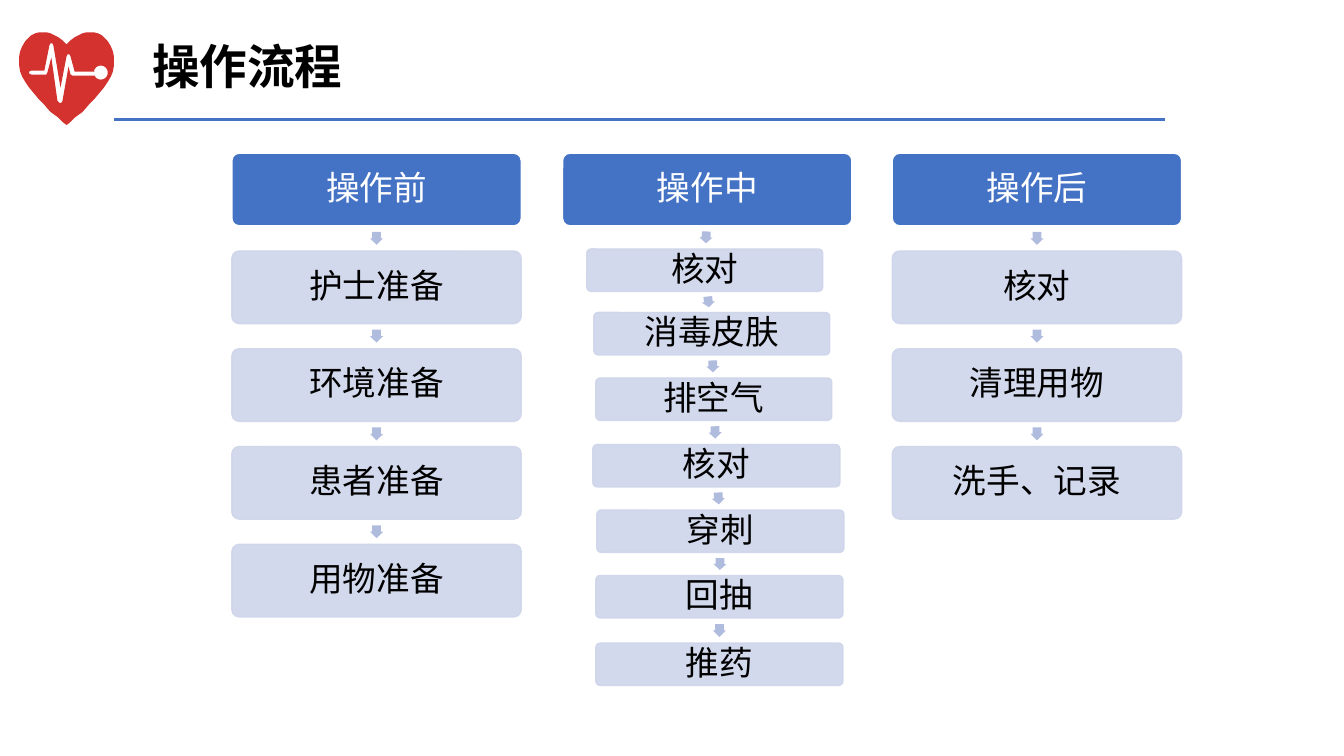
"""Build the nursing procedure slide: three lanes of steps before, during and after."""
from math import atan2, cos, degrees, radians, sin

from lxml import etree
from pptx import Presentation
from pptx.dml.color import RGBColor
from pptx.enum.shapes import MSO_CONNECTOR, MSO_SHAPE
from pptx.enum.text import MSO_ANCHOR, MSO_AUTO_SIZE, PP_ALIGN
from pptx.oxml.ns import qn
from pptx.util import Inches, Pt

ROUNDED = MSO_SHAPE.ROUNDED_RECTANGLE
ARROW = MSO_SHAPE.RIGHT_ARROW
STRAIGHT = MSO_CONNECTOR.STRAIGHT
MIDDLE = MSO_ANCHOR.MIDDLE
CENTER = PP_ALIGN.CENTER
FIT_SHAPE = MSO_AUTO_SIZE.SHAPE_TO_FIT_TEXT

FONT = "Noto Sans CJK SC"
BLUE = RGBColor(0x44, 0x72, 0xC4)
PALE = RGBColor(0xCF, 0xD5, 0xEA)
ARROW_BLUE = RGBColor(0xB0, 0xBC, 0xDE)
RED = RGBColor(0xD3, 0x32, 0x2F)
BLACK = RGBColor(0, 0, 0)
WHITE = RGBColor(0xFF, 0xFF, 0xFF)

TITLE = "操作流程"
HEAD_TOP, BOX_WIDTH, BOX_HEIGHT = 1.52, 2.87, 0.72
STEP_TOP, STEP_PITCH = 2.49, 0.97
SMALL_HEIGHT = 0.42
ARROW_WIDTH, ARROW_SHARE = 0.13, 0.51

SIDE_LANES = [
    ("操作前", 2.3, ["护士准备", "环境准备", "患者准备", "用物准备"]),
    ("操作后", 8.85, ["核对", "清理用物", "洗手、记录"]),
]
MIDDLE_HEAD = ("操作中", 5.58)
MIDDLE_STEPS = [
    ("核对", 5.82, 2.47, 2.34),
    ("消毒皮肤", 5.89, 3.1, 2.34),
    ("排空气", 5.91, 3.75, 2.34),
    ("核对", 5.88, 4.41, 2.45),
    ("穿刺", 5.92, 5.06, 2.45),
    ("回抽", 5.91, 5.71, 2.45),
    ("推药", 5.91, 6.38, 2.45),
]

HEART_AXIS = 0.66
HEART_LEFT = [
    (0.66, 0.44), (0.62, 0.4), (0.58, 0.37), (0.54, 0.35), (0.5, 0.33),
    (0.46, 0.32), (0.39, 0.32), (0.35, 0.33), (0.31, 0.35), (0.28, 0.38),
    (0.25, 0.41), (0.22, 0.46), (0.2, 0.51), (0.19, 0.56), (0.19, 0.65),
    (0.2, 0.71), (0.22, 0.76), (0.25, 0.81), (0.29, 0.87), (0.34, 0.93),
    (0.39, 0.99), (0.44, 1.04), (0.5, 1.11), (0.57, 1.16), (0.62, 1.21),
    (0.66, 1.24),
]
PULSE = [
    (0.94, 0.75), (0.72, 0.75), (0.7, 0.74), (0.68, 0.66), (0.62, 1),
    (0.61, 1.02), (0.59, 1.02), (0.58, 1.01), (0.57, 1), (0.51, 0.57),
    (0.47, 0.72), (0.46, 0.74), (0.31, 0.74), (0.29, 0.73), (0.29, 0.71),
    (0.31, 0.7), (0.44, 0.7), (0.49, 0.45), (0.5, 0.43), (0.52, 0.43),
    (0.53, 0.45), (0.6, 0.87), (0.66, 0.56), (0.67, 0.54), (0.69, 0.54),
    (0.7, 0.56), (0.74, 0.71), (0.94, 0.71),
]
PULSE_DOT = (1.0, 0.72, 0.07)


def style_paragraph(para, size, color, bold=False):
    """Set one font for Latin and East Asian text."""
    para.font.name = FONT
    para.font.size = Pt(size)
    para.font.bold = bold
    para.font.color.rgb = color
    latin = para._p.pPr.find(qn("a:defRPr")).find(qn("a:latin"))
    east_asian = etree.Element(qn("a:ea"), typeface=FONT)
    latin.addnext(east_asian)


def add_heart(page):
    """Draw the heart with the pulse line cut out of it."""
    mirrored = [(2 * HEART_AXIS - x, y) for x, y in reversed(HEART_LEFT[1:-1])]
    dot_x, dot_y, radius = PULSE_DOT
    arc = [(dot_x + radius * cos(radians(angle)), dot_y + radius * sin(radians(angle)))
           for angle in range(190, 511, 20)]
    outlines = [
        [(Inches(x), Inches(y)) for x, y in outline]
        for outline in (HEART_LEFT + mirrored, PULSE + arc)
    ]
    builder = page.shapes.build_freeform(*outlines[0][0])
    builder.add_line_segments(outlines[0][1:], close=True)
    builder.move_to(*outlines[1][0])
    builder.add_line_segments(outlines[1][1:], close=True)
    heart = builder.convert_to_shape()
    heart.shadow.inherit = False
    heart.fill.solid()
    heart.fill.fore_color.rgb = RED
    heart.line.fill.background()


def add_title(page):
    """Add the title and the rule below it."""
    box = page.shapes.add_textbox(Inches(1.41), Inches(0.32), Inches(2.11), Inches(0.67))
    box.text_frame.word_wrap = False
    box.text_frame.auto_size = FIT_SHAPE
    box.text_frame.text = TITLE
    style_paragraph(box.text_frame.paragraphs[0], 34, BLACK, bold=True)
    rule = page.shapes.add_connector(
        STRAIGHT, Inches(1.13), Inches(1.19), Inches(11.55), Inches(1.19))
    rule.line.color.rgb = BLUE
    rule.line.width = Pt(2.25)
    etree.SubElement(rule._element.spPr, qn("a:effectLst"))


def add_box(page, text, left, top, width, height, is_head):
    """Add a rounded box for a lane head or a step."""
    box = page.shapes.add_shape(
        ROUNDED, Inches(left), Inches(top), Inches(width), Inches(height))
    box.adjustments[0] = 0.1
    box.shadow.inherit = False
    box.fill.solid()
    box.fill.fore_color.rgb = BLUE if is_head else PALE
    box.line.color.rgb = WHITE if is_head else PALE
    box.line.width = Pt(1)
    if not is_head:
        for color in box._element.spPr.iter(qn("a:srgbClr")):
            etree.SubElement(color, qn("a:alpha"), val="90000")
    frame = box.text_frame
    frame.word_wrap = True
    frame.vertical_anchor = MIDDLE
    frame.margin_left = frame.margin_right = Inches(0.03)
    frame.margin_top = frame.margin_bottom = Inches(0.03)
    frame.text = text
    para = frame.paragraphs[0]
    para.alignment = CENTER
    para.line_spacing = 0.9
    style_paragraph(para, 24, WHITE if is_head else BLACK)


def add_arrow(page, upper, lower):
    """Point an arrow from one box to the next, centred in the gap."""
    _, left, top, width, height = upper
    _, next_left, next_top, next_width, next_height = lower
    start_x, end_x = left + width / 2, next_left + next_width / 2
    start_y, end_y = top + height / 2, next_top + next_height / 2
    gap = next_top - top - height
    length = gap * ARROW_SHARE
    center_x, center_y = (start_x + end_x) / 2, next_top - gap / 2
    arrow = page.shapes.add_shape(
        ARROW, Inches(center_x - length / 2), Inches(center_y - ARROW_WIDTH / 2),
        Inches(length), Inches(ARROW_WIDTH))
    arrow.adjustments[0] = 0.667
    arrow.adjustments[1] = 0.5
    arrow.rotation = degrees(atan2(end_y - start_y, end_x - start_x))
    arrow.shadow.inherit = False
    arrow.fill.solid()
    arrow.fill.fore_color.rgb = ARROW_BLUE
    arrow.line.fill.background()


def add_lane(page, head, left, steps):
    """Add a lane: its head, then each step with an arrow leading to it."""
    boxes = [(head, left, HEAD_TOP, BOX_WIDTH, BOX_HEIGHT)] + steps
    add_box(page, *boxes[0], is_head=True)
    for upper, lower in zip(boxes, boxes[1:]):
        add_arrow(page, upper, lower)
        add_box(page, *lower, is_head=False)


def main():
    """Build and save the deck."""
    deck = Presentation()
    deck.slide_width, deck.slide_height = Inches(13.33), Inches(7.5)
    page = deck.slides.add_slide(deck.slide_layouts[6])
    add_title(page)
    add_heart(page)
    for head, left, names in SIDE_LANES:
        steps = [(name, left, STEP_TOP + index * STEP_PITCH, BOX_WIDTH, BOX_HEIGHT)
                 for index, name in enumerate(names)]
        add_lane(page, head, left, steps)
    add_lane(page, *MIDDLE_HEAD, [(*step, SMALL_HEIGHT) for step in MIDDLE_STEPS])
    deck.save("out.pptx")


if __name__ == "__main__":
    main()
